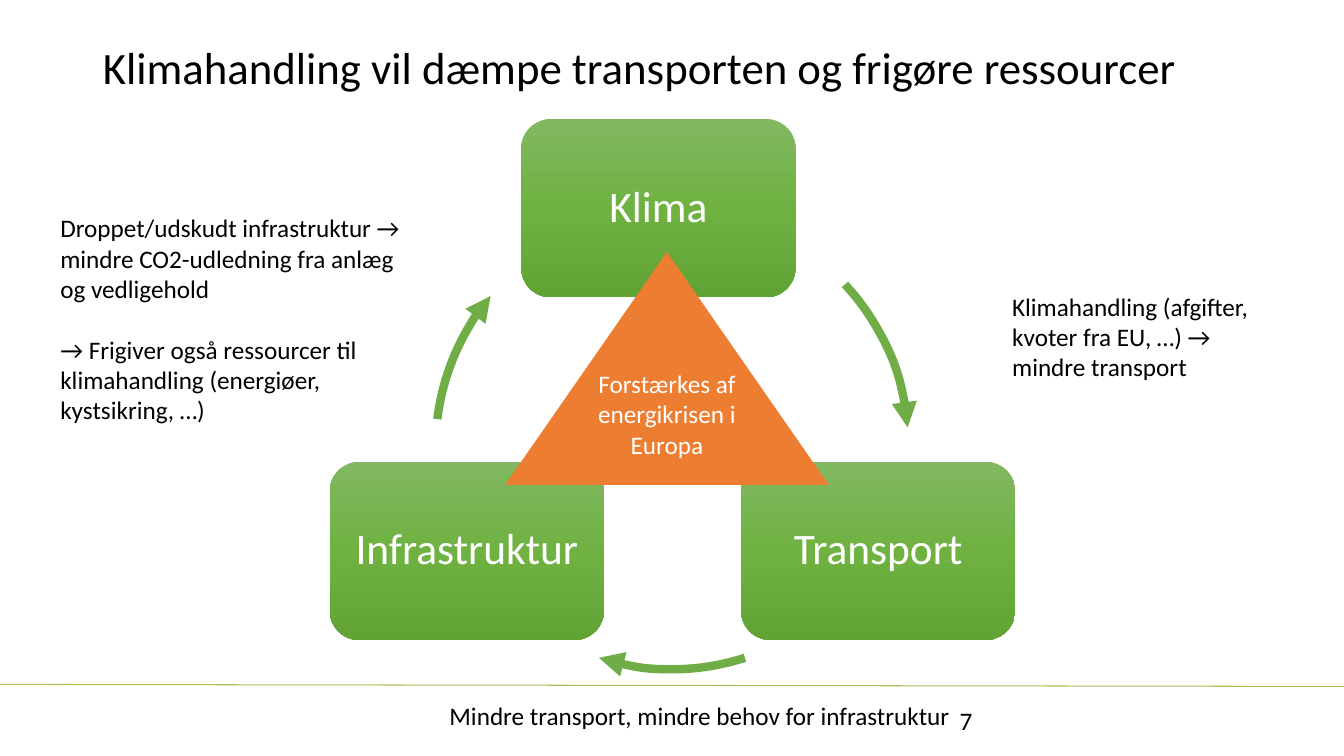
import copy
import math
import pptx
import pptx.util
import pptx.dml.color
import pptx.enum.dml
import pptx.enum.shapes
import pptx.enum.text
import pptx.oxml
import pptx.oxml.ns
import lxml.etree

WIDTH, HEIGHT = 13.33, 7.5
FONT = "Calibri"
BLACK, WHITE = "000000", "FFFFFF"
ARROW_GREEN, ORANGE, RULE_GREEN = "70AD47", "ED7D31", "A4C355"
NODE_GRADIENT = [(0, "81B861"), (0.5, "6FB242"), (1, "62A336")]
NODE_SIZE = (2.72, 1.77)
CYCLE_DIAMETER = 4.71

Shapes = pptx.enum.shapes.MSO_SHAPE
Align = pptx.enum.text.PP_ALIGN
Anchor = pptx.enum.text.MSO_ANCHOR


def color(hex_text):
    return pptx.dml.color.RGBColor.from_string(hex_text)


def inches(*lengths):
    return [pptx.util.Inches(length) for length in lengths]


def write(shape, *texts, size=18, ink=BLACK, align=Align.LEFT, anchor=Anchor.TOP,
          margins=(0.1, 0.05, 0.1, 0.05), line_spacing=1.0, gap=0):
    frame = shape.text_frame
    frame.word_wrap = True
    frame.auto_size = pptx.enum.text.MSO_AUTO_SIZE.NONE
    frame.vertical_anchor = anchor
    (frame.margin_left, frame.margin_top,
     frame.margin_right, frame.margin_bottom) = inches(*margins)
    for index, text in enumerate(texts):
        para = frame.add_paragraph() if index else frame.paragraphs[0]
        para.alignment = align
        para.line_spacing = line_spacing
        para.space_before = pptx.util.Pt(gap if index else 0)
        span = para.add_run()
        span.text = text
        span.font.name = FONT
        span.font.size = pptx.util.Pt(size)
        span.font.color.rgb = color(ink)


def add_title(page, box, text):
    title = page.shapes.title
    title.left, title.top, title.width, title.height = inches(*box)
    write(title, text, size=32, line_spacing=0.9)


def add_note(page, box, *texts):
    write(page.shapes.add_textbox(*inches(*box)), *texts, gap=22)


def add_rule(page, start, end):
    rule = page.shapes.add_connector(
        pptx.enum.shapes.MSO_CONNECTOR.STRAIGHT, *inches(*start, *end))
    rule.line.color.rgb = color(RULE_GREEN)
    rule.line.width = pptx.util.Pt(0.75)
    lxml.etree.SubElement(rule._element.spPr, pptx.oxml.ns.qn("a:effectLst"))


def add_node(page, box, text):
    node = page.shapes.add_shape(Shapes.ROUNDED_RECTANGLE, *inches(*box))
    node.shadow.inherit = False
    node.line.fill.background()
    node.fill.gradient()
    node.fill.gradient_angle = 270
    first = node._element.spPr.find(".//" + pptx.oxml.ns.qn("a:gs"))
    first.addnext(copy.deepcopy(first))
    for stop, (position, shade) in zip(node.fill.gradient_stops, NODE_GRADIENT):
        stop.position = position
        stop.color.rgb = color(shade)
    write(node, text, size=31, ink=WHITE, align=Align.CENTER, anchor=Anchor.MIDDLE,
          margins=(0.13,) * 4, line_spacing=0.9)


def add_cycle_arrow(page, corner, start_angle, end_angle):
    arrow = page.shapes.add_shape(
        Shapes.ARC, *inches(*corner, CYCLE_DIAMETER, CYCLE_DIAMETER))
    arrow.shadow.inherit = False
    arrow.adjustments[0] = start_angle * 0.6
    arrow.adjustments[1] = end_angle * 0.6
    arrow.fill.background()
    arrow.line.color.rgb = color(ARROW_GREEN)
    arrow.line.width = pptx.util.Pt(6)
    head = lxml.etree.SubElement(arrow.line._get_or_add_ln(), pptx.oxml.ns.qn("a:tailEnd"))
    head.set("type", "triangle")


def add_cycle(page, box):
    left, top, width, height = box
    node_width, node_height = NODE_SIZE
    lower = top + height - node_height
    right = left + width - node_width
    nodes = [("Klima", (left + right) / 2 - 0.14, top),
             ("Transport", right, lower),
             ("Infrastruktur", left, lower)]
    arrows = [((4.3, 2.07), 317.1, 355.5),
              ((4.31, 1.93), 72.1, 107.9),
              ((4.32, 2.09), 187, 219.8)]
    for (name, x, y), arrow in zip(nodes, arrows):
        add_node(page, (x, y, node_width, node_height), name)
        add_cycle_arrow(page, *arrow)


def add_triangle(page, box, text):
    triangle = page.shapes.add_shape(Shapes.ISOSCELES_TRIANGLE, *inches(*box))
    triangle.shadow.inherit = False
    triangle.fill.solid()
    triangle.fill.fore_color.rgb = color(ORANGE)
    triangle.line.fill.background()
    write(triangle, text, ink=WHITE, align=Align.CENTER, margins=(0.1, 0, 0.1, 0))


def main():
    deck = pptx.Presentation()
    deck.slide_width, deck.slide_height = inches(WIDTH, HEIGHT)
    page = deck.slides.add_slide(deck.slide_layouts[5])
    add_rule(page, (0, 6.79), (WIDTH, 6.81))
    add_title(page, (0.92, 0.4, 11.5, 1.33),
              "Klimahandling vil dæmpe transporten og frigøre ressourcer")
    add_cycle(page, (3.27, 1.18, 6.8, 5.17))
    add_note(page, (9.94, 2.84, 2.89, 1.01),
             "Klimahandling (afgifter, kvoter fra EU, …) → mindre transport")
    add_note(page, (0.5, 2.06, 3.66, 2.22),
             "Droppet/udskudt infrastruktur → mindre CO2-udledning fra anlæg og vedligehold",
             "→ Frigiver også ressourcer til klimahandling (energiøer, kystsikring, …)")
    add_note(page, (4.36, 6.9, 5.33, 0.4),
             "Mindre transport, mindre behov for infrastruktur")
    add_triangle(page, (5.01, 2.5, 3.21, 2.31), "Forstærkes af energikrisen i Europa")
    add_note(page, (9.42, 6.95, 3, 0.4), "7")
    deck.save("out.pptx")


if __name__ == "__main__":
    main()
